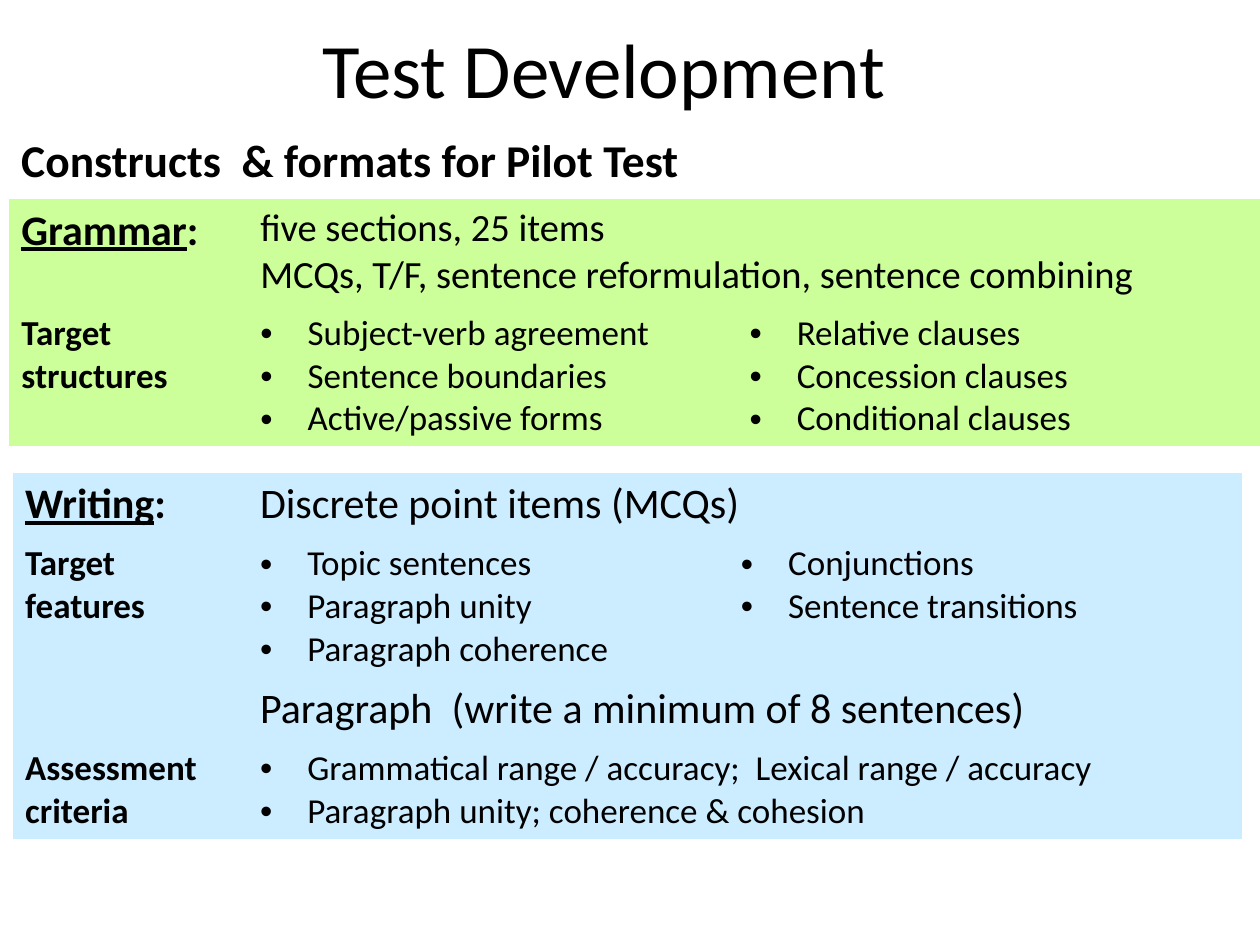
from dataclasses import dataclass
from typing import Optional

from lxml.etree import SubElement
from pptx import Presentation
from pptx.dml.color import RGBColor as Rgb
from pptx.enum.text import MSO_ANCHOR as Anchor, PP_ALIGN as Align
from pptx.oxml.ns import qn
from pptx.util import Inches, Pt

SLIDE_W, SLIDE_H = 10, 7.5
COLUMN_SHARES = (0.191, 0.391, 0.418)
LINE_SPACING = 1.22
CELL_PADDING = 0.1
BULLET_INDENT = 0.375
PLAIN_TABLE_STYLE = "{2D5ABB26-0587-4C30-8999-92F81FD0307C}"


@dataclass(frozen=True)
class Theme:
    font: str = "Calibri"
    ink: Rgb = Rgb.from_string("000000")
    grammar: Rgb = Rgb.from_string("CCFF99")
    writing: Rgb = Rgb.from_string("CCECFF")
    title: int = 44
    subtitle: int = 26
    section: int = 24
    formats: int = 22
    detail: int = 20


THEME = Theme()


@dataclass(frozen=True)
class Entry:
    """Lines of one cell; an underlined entry ends in a plain colon."""
    lines: tuple[str, ...]
    size: int = THEME.detail
    bold: bool = False
    bulleted: bool = False
    underlined: bool = False


@dataclass(frozen=True)
class Row:
    label: Optional[Entry]
    content: Entry
    more: Optional[Entry] = None  # without it, content spans two columns

    @property
    def height(self) -> float:
        points = len(self.content.lines) * self.content.size * LINE_SPACING
        return points / 72 + CELL_PADDING


@dataclass(frozen=True)
class Section:
    left: float
    top: float
    width: float
    fill: Rgb
    rows: tuple[Row, ...]


def heading(name: str) -> Entry:
    return Entry((name,), THEME.section, bold=True, underlined=True)


def label(*lines: str) -> Entry:
    return Entry(lines, bold=True)


def bullets(*lines: str) -> Entry:
    return Entry(lines, bulleted=True)


SECTIONS = (
    Section(0.07, 1.58, 9.93, THEME.grammar, (
        Row(heading("Grammar"),
            Entry(("five sections, 25 items",
                   "MCQs, T/F, sentence reformulation, sentence combining"),
                  THEME.formats)),
        Row(label("Target structures"),
            bullets("Subject-verb agreement", "Sentence boundaries",
                    "Active/passive forms"),
            bullets("Relative clauses", "Concession clauses",
                    "Conditional clauses")),
    )),
    Section(0.1, 3.75, 9.76, THEME.writing, (
        Row(heading("Writing"),
            Entry(("Discrete point items (MCQs)",), THEME.section)),
        Row(label("Target features"),
            bullets("Topic sentences", "Paragraph unity",
                    "Paragraph coherence"),
            bullets("Conjunctions", "Sentence transitions")),
        Row(None, Entry(("Paragraph  (write a minimum of 8 sentences)",),
                        THEME.section)),
        Row(label("Assessment", "criteria"),
            bullets("Grammatical range / accuracy;  Lexical range / accuracy",
                    "Paragraph unity; coherence & cohesion")),
    )),
)


def style(paragraph, size: int, bold: bool = False) -> None:
    font = paragraph.font
    font.name, font.size, font.bold = THEME.font, Pt(size), bold
    font.color.rgb = THEME.ink


def add_bullet(paragraph) -> None:
    properties = paragraph._p.get_or_add_pPr()
    properties.set("marL", str(Inches(BULLET_INDENT)))
    properties.set("indent", str(-Inches(BULLET_INDENT)))
    bullet_font = SubElement(properties, qn("a:buFont"))
    bullet_font.set("typeface", "Arial")
    SubElement(properties, qn("a:buChar")).set("char", "•")
    # Bullet elements must precede the default run properties
    defaults = properties.find(qn("a:defRPr"))
    if defaults is not None:
        properties.append(defaults)


def write_entry(frame, entry: Entry) -> None:
    for index, line in enumerate(entry.lines):
        paragraph = frame.add_paragraph() if index else frame.paragraphs[0]
        style(paragraph, entry.size, entry.bold)
        run = paragraph.add_run()
        run.text = line
        if entry.underlined:
            run.font.underline = True
            paragraph.add_run().text = ":"
        if entry.bulleted:
            add_bullet(paragraph)


def add_heading(slide, text: str, box: tuple[float, ...], size: int,
                bold: bool, align: Align, anchor: Anchor) -> None:
    frame = slide.shapes.add_textbox(*map(Inches, box)).text_frame
    frame.word_wrap = True
    frame.vertical_anchor = anchor
    write_entry(frame, Entry((text,), size, bold))
    frame.paragraphs[0].alignment = align


def add_section(slide, section: Section) -> None:
    heights = [row.height for row in section.rows]
    box = (section.left, section.top, section.width, sum(heights))
    shape = slide.shapes.add_table(len(heights), len(COLUMN_SHARES),
                                   *map(Inches, box))
    table = shape.table
    table.first_row = table.horz_banding = False
    for style_id in shape.element.iter(qn("a:tableStyleId")):
        style_id.text = PLAIN_TABLE_STYLE
    for column, share in zip(table.columns, COLUMN_SHARES):
        column.width = Inches(section.width * share)

    for index, (row, height) in enumerate(zip(section.rows, heights)):
        table.rows[index].height = Inches(height)
        if row.more is None:
            table.cell(index, 1).merge(table.cell(index, 2))
        for position, entry in enumerate((row.label, row.content, row.more)):
            cell = table.cell(index, position)
            cell.fill.solid()
            cell.fill.fore_color.rgb = section.fill
            if entry:
                write_entry(cell.text_frame, entry)


def main() -> None:
    deck = Presentation()
    deck.slide_width, deck.slide_height = Inches(SLIDE_W), Inches(SLIDE_H)
    slide = deck.slides.add_slide(deck.slide_layouts[6])

    # Title and subtitle
    add_heading(slide, "Test Development", (-0.08, 0, 9.75, 1.07),
                THEME.title, False, Align.CENTER, Anchor.MIDDLE)
    add_heading(slide, "Constructs  & formats for Pilot Test",
                (0.07, 1, 9.78, 5.86),
                THEME.subtitle, True, Align.LEFT, Anchor.TOP)

    # Grammar and writing tables
    for section in SECTIONS:
        add_section(slide, section)

    deck.save("out.pptx")


if __name__ == "__main__":
    main()
